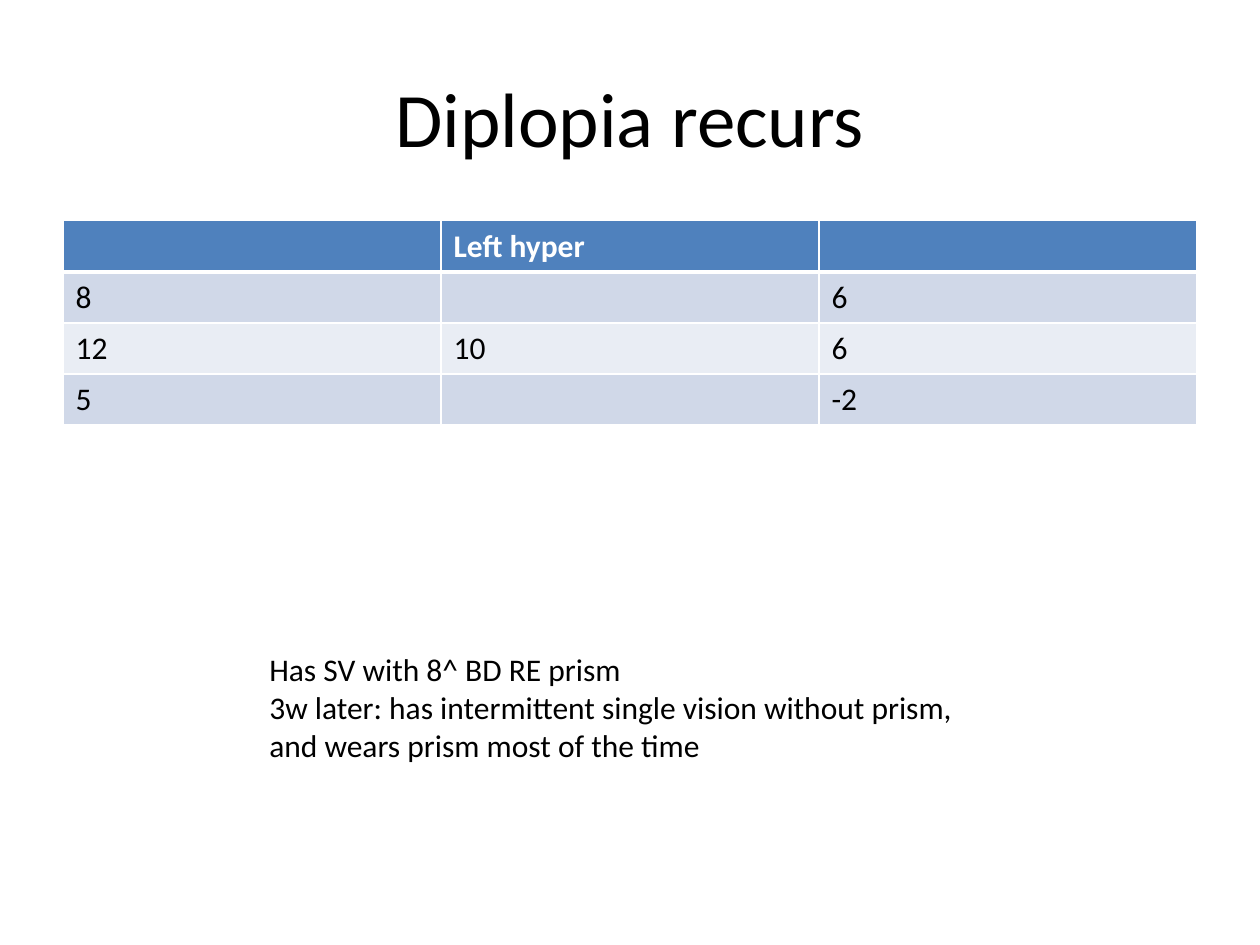
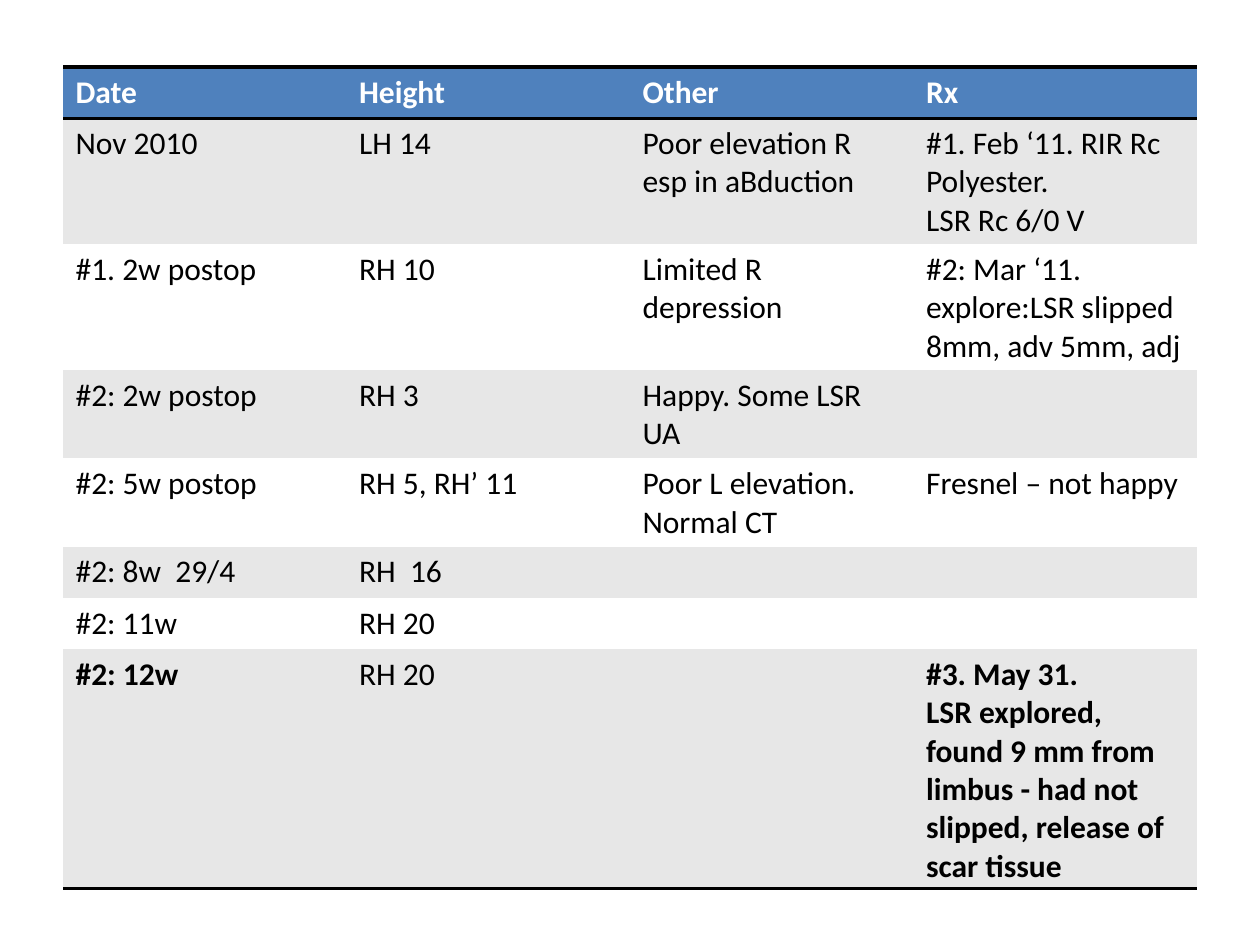
import pptx
import pptx.dml.color
import pptx.enum.text
import pptx.oxml.ns
import pptx.util
from lxml import etree
from pptx.util import Cm, Pt

RGBColor = pptx.dml.color.RGBColor
BLACK = RGBColor(0x00, 0x00, 0x00)
WHITE = RGBColor(0xFF, 0xFF, 0xFF)
HEADER_BLUE = RGBColor(0x4F, 0x81, 0xBD)
BAND_BLUE = RGBColor(0xD0, 0xD8, 0xE8)
PALE_BLUE = RGBColor(0xE9, 0xED, 0xF4)
BAND_GREY = RGBColor(0xE7, 0xE7, 0xE7)

FONT = "Calibri"
MARGIN = Cm(1.27)
CONTENT_WIDTH = Cm(22.86)
ROW_HEIGHT = Cm(1.03)


def write(frame, text, size=18, color=BLACK, bold=False, align=None):
    """Fill a text frame, one paragraph for each line of text."""
    for number, line in enumerate(text.split("\n")):
        para = frame.add_paragraph() if number else frame.paragraphs[0]
        para.alignment = align
        span = para.add_run()
        span.text = line
        span.font.name = FONT
        span.font.size = Pt(size)
        span.font.bold = bold
        span.font.color.rgb = color


def add_grid(page, top, rows, bands, rules, divider=None, bold_cells=()):
    """Add a table; rules maps a row boundary to (colour, points), divider is the vertical rule."""
    frame = page.shapes.add_table(len(rows), len(rows[0]), MARGIN, top,
                                  CONTENT_WIDTH, ROW_HEIGHT * len(rows))
    grid = frame.table
    properties = grid._tbl.tblPr
    properties.remove(properties.find(pptx.oxml.ns.qn("a:tableStyleId")))
    for r, texts in enumerate(rows):
        grid.rows[r].height = ROW_HEIGHT
        for c, text in enumerate(texts):
            cell = grid.cell(r, c)
            edges = {"lnL": divider, "lnR": divider, "lnT": rules.get(r), "lnB": rules.get(r + 1)}
            for side, rule in edges.items():
                line = etree.SubElement(cell._tc.get_or_add_tcPr(), pptx.oxml.ns.qn("a:" + side))
                if rule is None:
                    etree.SubElement(line, pptx.oxml.ns.qn("a:noFill"))
                    continue
                color, points = rule
                line.set("w", str(Pt(points)))
                solid = etree.SubElement(line, pptx.oxml.ns.qn("a:solidFill"))
                etree.SubElement(solid, pptx.oxml.ns.qn("a:srgbClr"), val=str(color))
            cell.fill.solid()
            cell.fill.fore_color.rgb = bands[(r - 1) % 2] if r else HEADER_BLUE
            if text:
                write(cell.text_frame, text, color=BLACK if r else WHITE,
                      bold=r == 0 or (r, c) in bold_cells)


deck = pptx.Presentation()
deck.slide_width, deck.slide_height = Cm(25.4), Cm(19.05)
blank = deck.slide_layouts[6]

# Slide 1: measurements when diplopia recurs
page = deck.slides.add_slide(blank)
title = page.shapes.add_textbox(MARGIN, Cm(0.76), CONTENT_WIDTH, Cm(3.18)).text_frame
title.word_wrap = True
title.vertical_anchor = pptx.enum.text.MSO_ANCHOR.MIDDLE
write(title, "Diplopia recurs", size=44, align=pptx.enum.text.PP_ALIGN.CENTER)

deviations = [
    ("", "Left hyper", ""),
    ("8", "", "6"),
    ("12", "10", "6"),
    ("5", "", "-2"),
]
thin_white = (WHITE, 1)
white_rules = {boundary: thin_white for boundary in range(len(deviations) + 1)}
white_rules[1] = (WHITE, 3)
add_grid(page, Cm(4.45), deviations, (BAND_BLUE, PALE_BLUE), white_rules, divider=thin_white)

outcome = page.shapes.add_textbox(Cm(5.18), Cm(12.98), Cm(14.43), Cm(2.57)).text_frame
outcome.word_wrap = False
write(outcome, "Has SV with 8^ BD RE prism\n"
               "3w later: has intermittent single vision without prism,\n"
               "and wears prism most of the time")

# Slide 2: course of treatment
page = deck.slides.add_slide(blank)
visits = [
    ("Date", "Height", "Other", "Rx"),
    ("Nov 2010", "LH 14", "Poor elevation R esp in aBduction",
     "#1. Feb ‘11. RIR Rc Polyester.\nLSR Rc 6/0 V"),
    ("#1. 2w postop", "RH 10", "Limited R depression",
     "#2: Mar ‘11. explore:LSR slipped 8mm, adv 5mm, adj"),
    ("#2: 2w postop", "RH 3", "Happy. Some LSR UA", ""),
    ("#2: 5w postop", "RH 5, RH’ 11", "Poor L elevation. Normal CT", "Fresnel – not happy"),
    ("#2: 8w  29/4", "RH  16", "", ""),
    ("#2: 11w", "RH 20", "", ""),
    ("#2: 12w", "RH 20", "",
     "#3. May 31.\nLSR explored, found 9 mm from limbus - had not slipped, release of scar tissue"),
]
last = len(visits) - 1
black_rules = {boundary: (BLACK, 2) for boundary in (0, 1, len(visits))}
add_grid(page, Cm(1.35), visits, (BAND_GREY, WHITE), black_rules,
         bold_cells={(last, 0), (last, 3)})

deck.save("out.pptx")
